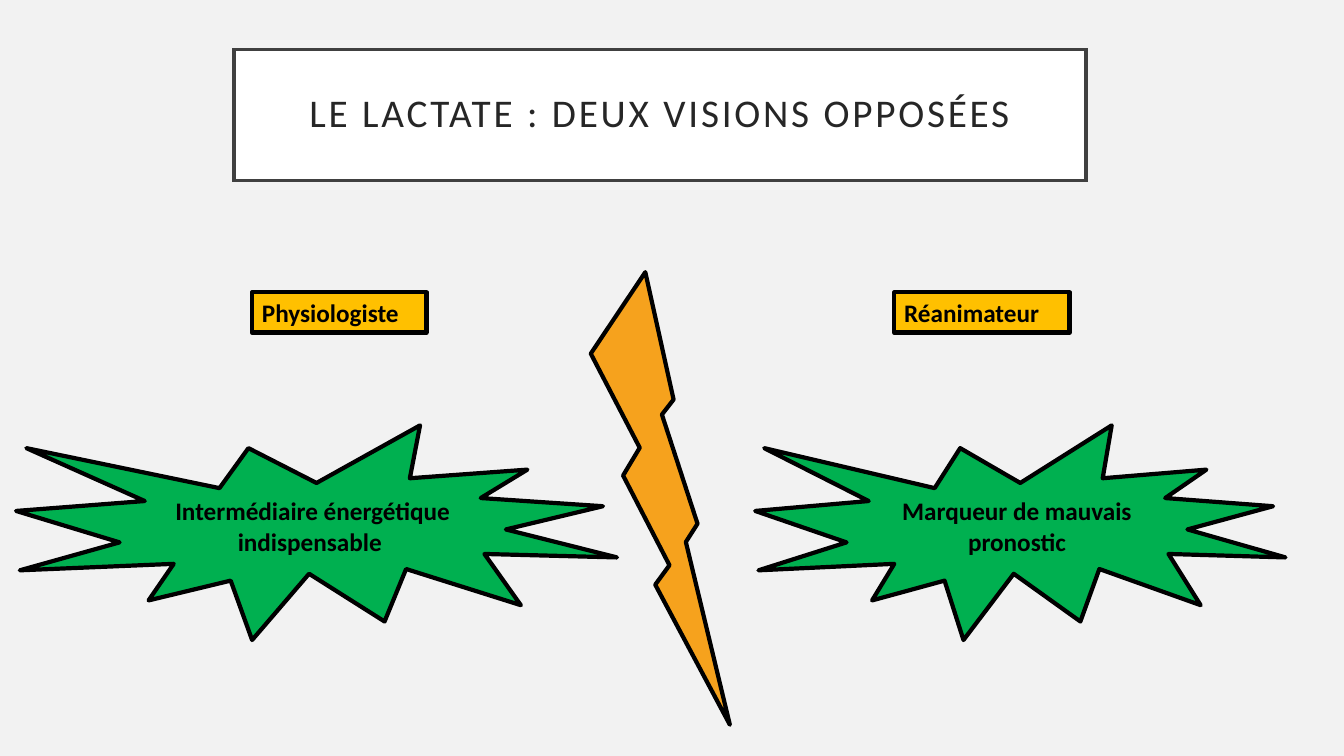
from pptx import Presentation
from pptx.dml.color import RGBColor
from pptx.enum.shapes import MSO_SHAPE as Shape
from pptx.enum.text import MSO_ANCHOR as Anchor, MSO_AUTO_SIZE as AutoSize, PP_ALIGN as Align
from pptx.oxml.ns import qn
from pptx.oxml.xmlchemy import OxmlElement
from pptx.util import Inches, Pt

WIDTH, HEIGHT = Inches(13.33), Inches(7.5)
LABEL_TOP, LABEL_HEIGHT = 38.67, 5.33
SEAL_TOP, SEAL_HEIGHT = 56.27, 28.4
BOLD_TEXT = {"name": "Calibri", "size": Pt(18), "bold": True}
TITLE_TEXT = {"name": "Calibri", "size": Pt(28), "bold": False}


def set_color(color_format, value):
    color_format.rgb = RGBColor.from_string(value)


def set_all(target, values):
    for name, value in values.items():
        setattr(target, name, value)


def share(left, top, width, height):
    return {
        "left": round(WIDTH * left / 100),
        "top": round(HEIGHT * top / 100),
        "width": round(WIDTH * width / 100),
        "height": round(HEIGHT * height / 100),
    }


def paint(box, fill, line, weight):
    box.fill.solid()
    set_color(box.fill.fore_color, fill)
    set_color(box.line.color, line)
    box.line.width = Pt(weight)


def write(box, text, font, color, frame, align):
    set_all(box.text_frame, {"word_wrap": True, "auto_size": AutoSize.NONE, **frame})
    para = box.text_frame.paragraphs[0]
    para.alignment = align
    span = para.add_run()
    span.text = text
    set_all(span.font, font)
    set_color(span.font.color, color)
    return para, span


def add_title(page, text):
    box = page.shapes.title
    set_all(box, share(17.4, 6.53, 63.39, 17.33))
    paint(box, "FFFFFF", "404040", 2.5)
    corner = OxmlElement("a:miter")
    corner.set("lim", "800000")
    box.element.spPr.find(qn("a:ln")).append(corner)
    sides = ("left", "top", "right", "bottom")
    frame = {f"margin_{side}": Inches(0.2) for side in sides}
    frame["vertical_anchor"] = Anchor.MIDDLE
    para, span = write(box, text, TITLE_TEXT, "262626", frame, Align.CENTER)
    para.line_spacing = 0.9
    span.font._element.set("spc", "200")


def add_outlined(page, kind, area, fill):
    box = page.shapes.add_shape(kind, **share(*area))
    box.shadow.inherit = False
    paint(box, fill, "000000", 3)
    return box


def add_label(page, left, width, text):
    area = (left, LABEL_TOP, width, LABEL_HEIGHT)
    box = add_outlined(page, Shape.RECTANGLE, area, "FFC000")
    write(box, text, BOLD_TEXT, "000000", {"vertical_anchor": Anchor.TOP}, Align.LEFT)


def add_seal(page, left, width, text):
    area = (left, SEAL_TOP, width, SEAL_HEIGHT)
    box = add_outlined(page, Shape.EXPLOSION1, area, "00B050")
    write(box, text, BOLD_TEXT, "000000", {"vertical_anchor": Anchor.MIDDLE}, Align.CENTER)


def main():
    deck = Presentation()
    set_all(deck, {"slide_width": WIDTH, "slide_height": HEIGHT})
    page = deck.slides.add_slide(deck.slide_layouts[5])
    page.background.fill.solid()
    set_color(page.background.fill.fore_color, "F2F2F2")

    add_title(page, "LE LACTATE : DEUX VISIONS OPPOSÉES")
    add_outlined(page, Shape.LIGHTNING_BOLT, (43.96, 36, 10.35, 59.87), "F6A21D")
    add_label(page, 18.75, 12.98, "Physiologiste")
    add_label(page, 66.54, 13.05, "Réanimateur")
    add_seal(page, 56.19, 39.46, "Marqueur de mauvais pronostic")
    add_seal(page, 1.2, 44.71, "Intermédiaire énergétique indispensable ")
    deck.save("out.pptx")


if __name__ == "__main__":
    main()
